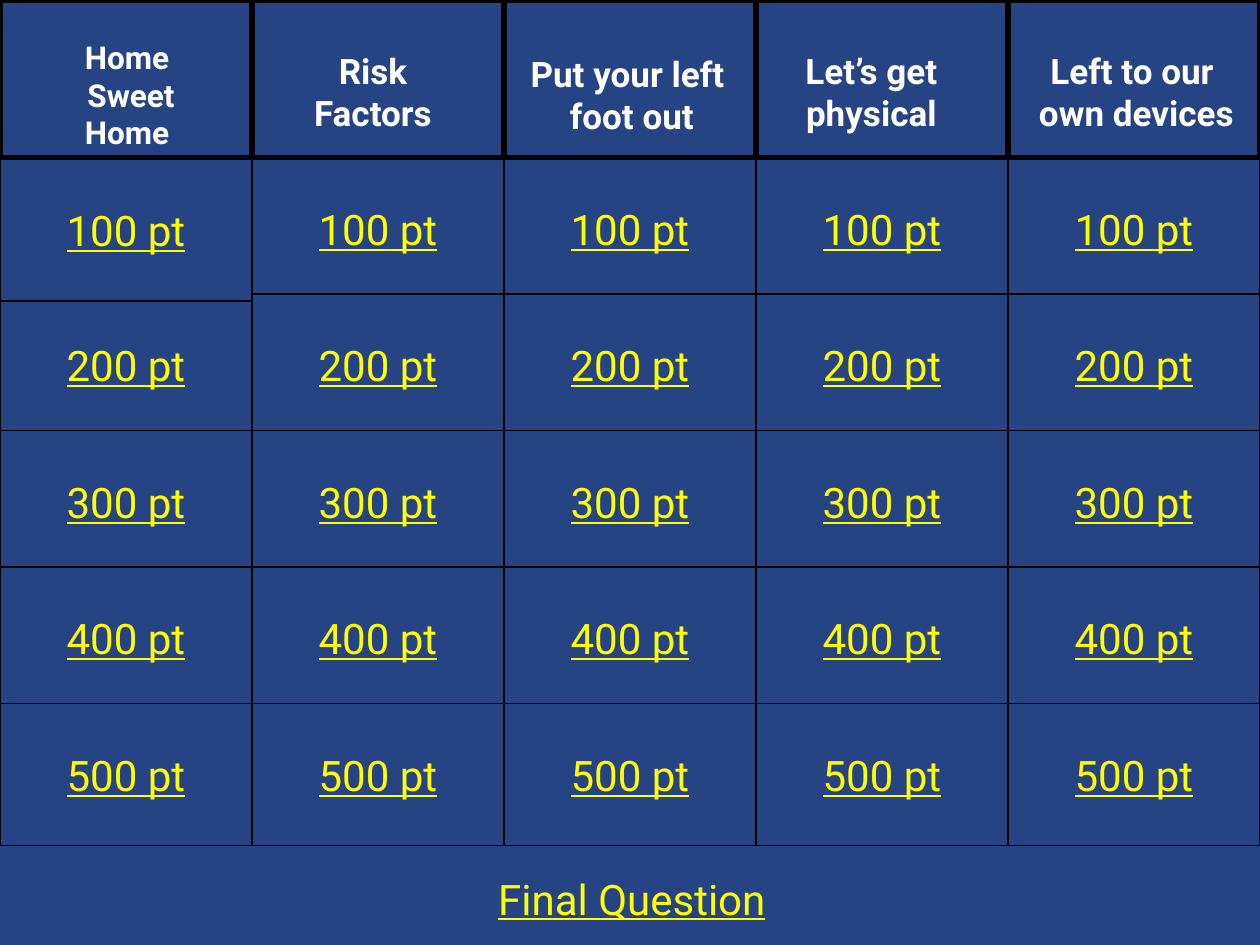
from dataclasses import dataclass
from itertools import product

from pptx import Presentation
from pptx.dml.color import RGBColor
from pptx.enum.shapes import MSO_SHAPE
from pptx.enum.text import MSO_ANCHOR, MSO_AUTO_SIZE, PP_ALIGN
from pptx.util import Inches, Pt


@dataclass(frozen=True)
class Theme:
    font: str = "Roboto"
    board: RGBColor = RGBColor(0x26, 0x44, 0x84)
    grid: RGBColor = RGBColor(0, 0, 0)
    heading: RGBColor = RGBColor(0xFF, 0xFF, 0xFF)
    points: RGBColor = RGBColor(0xFF, 0xFF, 0)
    small_heading_size: int = 18
    heading_size: int = 20
    points_size: int = 24
    thin: float = 0.75
    thick: float = 3


theme = Theme()


def write(shape, *lines, size, color, bold=False, underline=False, wrap=True):
    frame = shape.text_frame
    frame.word_wrap = wrap
    for index, line in enumerate(lines):
        paragraph = frame.add_paragraph() if index else frame.paragraphs[0]
        paragraph.alignment = PP_ALIGN.CENTER
        run = paragraph.add_run()
        run.text = line
        font = run.font
        font.name = theme.font
        font.size = Pt(size)
        font.color.rgb = color
        font.bold = bold
        font.underline = underline


def add_tile(kind, left, top, height, border):
    tile = slide.shapes.add_shape(
        kind, Inches(left), Inches(top), Inches(COLUMN_WIDTH), Inches(height))
    tile.shadow.inherit = False
    tile.fill.solid()
    tile.fill.fore_color.rgb = theme.board
    tile.line.color.rgb = theme.grid
    tile.line.width = Pt(border)
    return tile


COLUMNS = 5
ROWS = 5
COLUMN_WIDTH = 2
HEADER_HEIGHT = 1.25
ROW_PITCH = 13 / 12
BUTTON_HEIGHT = 1.13

prs = Presentation()
prs.slide_width = Inches(10)
prs.slide_height = Inches(7.5)
slide = prs.slides.add_slide(prs.slide_layouts[6])
slide.background.fill.solid()
slide.background.fill.fore_color.rgb = theme.board

# Point buttons: the first cell sits slightly lower and overlaps the one below
cells = list(product(range(COLUMNS), range(ROWS)))
for column, row in cells[1:] + cells[:1]:
    top = HEADER_HEIGHT + row * ROW_PITCH
    if (column, row) == (0, 0):
        top += 0.01
    button = add_tile(MSO_SHAPE.ACTION_BUTTON_CUSTOM, column * COLUMN_WIDTH, top,
                      BUTTON_HEIGHT, theme.thin)
    button.text_frame.vertical_anchor = MSO_ANCHOR.MIDDLE
    write(button, f"{(row + 1) * 100} pt", size=theme.points_size,
          color=theme.points, underline=True, wrap=False)

for column in range(COLUMNS):
    add_tile(MSO_SHAPE.RECTANGLE, column * COLUMN_WIDTH, 0, HEADER_HEIGHT, theme.thick)

# Captions: left, top, width, height, lines, format
category = dict(size=theme.heading_size, color=theme.heading, bold=True)
captions = [
    (0.25, 0.25, 1.58, 1.01, ["Home ", "Sweet Home "],
     category | dict(size=theme.small_heading_size)),
    (2.35, 0.34, 1.22, 0.77, ["Risk", "Factors"], category | dict(wrap=False)),
    (4.06, 0.37, 1.91, 0.77, ["Put your left ", "foot out"], category | dict(wrap=False)),
    (6.24, 0.34, 1.42, 0.77, ["Let’s get ", "physical "], category | dict(wrap=False)),
    (7.97, 0.34, 2.03, 0.77, ["Left to our", " own devices"], category),
    (2.5, 6.88, 5.03, 0.5, ["Final Question"],
     dict(size=theme.points_size, color=theme.points, underline=True)),
]
for left, top, width, height, lines, style in captions:
    caption = slide.shapes.add_textbox(
        Inches(left), Inches(top), Inches(width), Inches(height))
    write(caption, *lines, **style)
    caption.text_frame.auto_size = MSO_AUTO_SIZE.SHAPE_TO_FIT_TEXT

prs.save("out.pptx")
